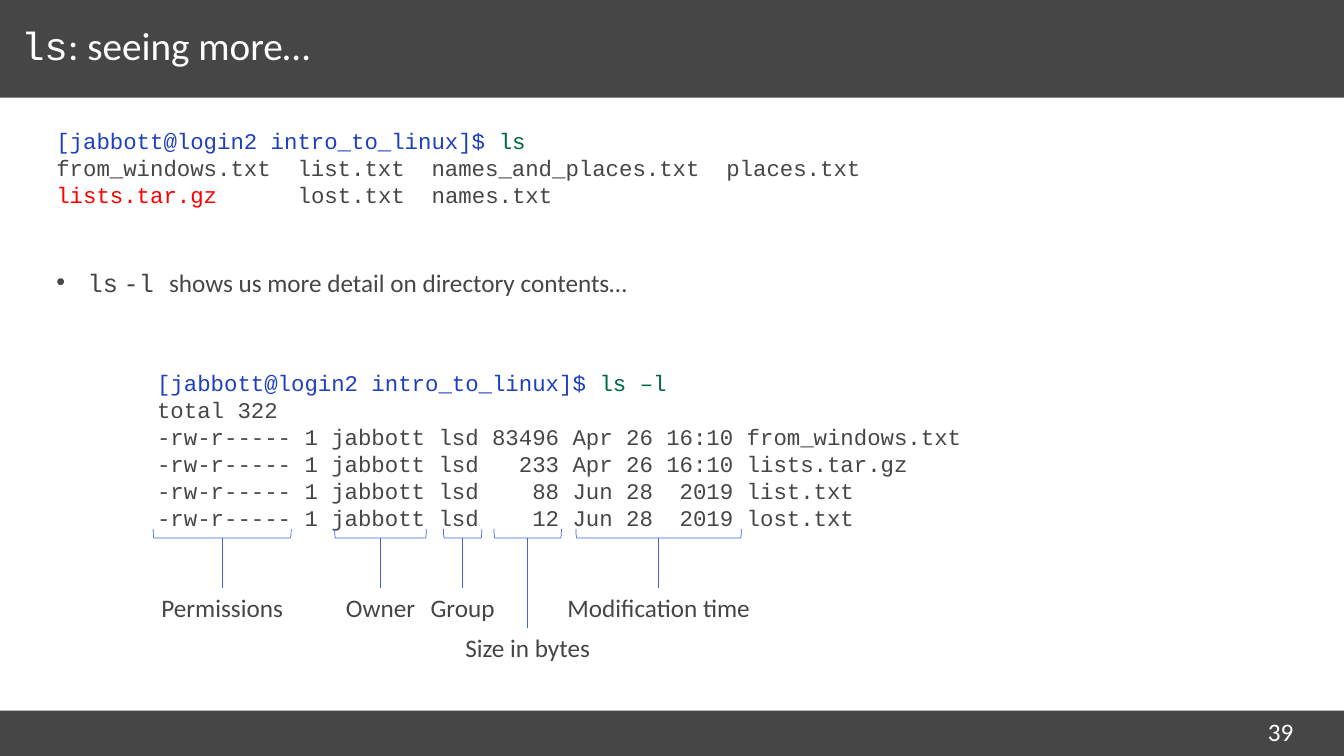
from dataclasses import dataclass
from typing import Any

from lxml.etree import SubElement
from pptx import Presentation
from pptx.dml.color import RGBColor
from pptx.dml.fill import FillFormat
from pptx.enum.shapes import MSO_CONNECTOR as Connector, MSO_SHAPE as Shape
from pptx.enum.text import MSO_ANCHOR as Anchor, MSO_AUTO_SIZE as AutoSize, PP_ALIGN as Align
from pptx.oxml.ns import qn
from pptx.util import Cm, Pt

SANS, MONO = "Calibri", "Courier New"
GREY, WHITE, RED = "464646", "FFFFFF", "FF0000"
PROMPT, COMMAND, BRACKET = "1D40BE", "00683E", "4365E2"
SLIDE_WIDTH, SLIDE_HEIGHT = 33.87, 19.05
BRACKET_MIDDLE, BRACKET_DEPTH = 13.44, 0.23
STEM_TOP, LABEL_HEIGHT = 13.56, 1.02


@dataclass
class Piece:
    text: str
    color: str = GREY
    font: str = MONO


@dataclass
class Field:
    label: str
    centre: float
    span: float
    label_width: float
    label_top: float = 14.81


FIELDS = [
    Field("Permissions", 5.6, 3.48, 3.61),
    Field("Owner", 9.59, 2.31, 2.29),
    Field("Group", 11.66, 0.97, 2.13),
    Field("Size in bytes", 13.3, 1.7, 3.71, 15.82),
    Field("Modification time", 16.6, 4.17, 5.18),
]

SHORT_LISTING = [
    Piece("[jabbott@login2 intro_to_linux]$ ", PROMPT),
    Piece("ls\n", COMMAND),
    Piece("from_windows.txt  list.txt  names_and_places.txt  places.txt\n"),
    Piece("lists.tar.gz      ", RED),
    Piece("lost.txt  names.txt"),
]
EXPLANATION = [
    Piece("ls"),
    Piece(" ", font=SANS),
    Piece("-l "),
    Piece("shows us more detail on directory contents…", font=SANS),
]
LONG_LISTING = [
    Piece("[jabbott@login2 intro_to_linux]$ ", PROMPT),
    Piece("ls –l\n", COMMAND),
    Piece("""total 322
-rw-r----- 1 jabbott lsd 83496 Apr 26 16:10 from_windows.txt
-rw-r----- 1 jabbott lsd   233 Apr 26 16:10 lists.tar.gz
-rw-r----- 1 jabbott lsd    88 Jun 28  2019 list.txt
-rw-r----- 1 jabbott lsd    12 Jun 28  2019 lost.txt"""),
]


def apply(target: Any, values: dict[str, Any]) -> None:
    for name, value in values.items():
        setattr(target, name, value)


def paint(fill: FillFormat, color: str) -> None:
    fill.solid()
    fill.fore_color.rgb = RGBColor.from_string(color)


def box(left: float, top: float, width: float, height: float) -> dict[str, Any]:
    return {"left": Cm(left), "top": Cm(top), "width": Cm(width), "height": Cm(height)}


def write(paragraph: Any, pieces: list[Piece], size: int) -> None:
    for piece in pieces:
        for number, line in enumerate(piece.text.split("\n")):
            if number:
                paragraph.add_line_break()
                SubElement(paragraph._p[-1], qn("a:rPr"), sz=str(size * 100))
            if line:
                run = paragraph.add_run()
                run.text = line
                apply(run.font, {"name": piece.font, "size": Pt(size)})
                paint(run.font.fill, piece.color)


def indent(paragraph: Any, left: float, hanging: float = 0) -> Any:
    properties = paragraph._p.get_or_add_pPr()
    properties.set("marL", str(Cm(left)))
    properties.set("indent", str(-Cm(hanging)))
    return properties


def write_listing(paragraph: Any, pieces: list[Piece], left: float, before: float) -> None:
    apply(paragraph, {"line_spacing": Pt(19.3), "space_before": Pt(before), "space_after": Pt(0)})
    SubElement(indent(paragraph, left), qn("a:buNone"))
    write(paragraph, pieces, 16)


def add_band(slide: Any, top: float, height: float) -> None:
    band = slide.shapes.add_shape(Shape.RECTANGLE, *box(0, top, SLIDE_WIDTH, height).values())
    band.shadow.inherit = False
    paint(band.fill, GREY)
    band.line.fill.background()
    band.element.getparent().insert(2, band.element)


def add_field(slide: Any, field: Field) -> None:
    group = slide.shapes.add_group_shape().shapes

    bracket = group.add_shape(Shape.LEFT_BRACKET, *box(
        field.centre - BRACKET_DEPTH / 2, BRACKET_MIDDLE - field.span / 2,
        BRACKET_DEPTH, field.span).values())
    bracket.rotation = 270
    bracket.shadow.inherit = False
    bracket.fill.background()

    stem = group.add_connector(Connector.STRAIGHT, Cm(field.centre), Cm(STEM_TOP),
                               Cm(field.centre), Cm(field.label_top))
    SubElement(stem._element.spPr, qn("a:effectLst"))
    for stroke in (bracket.line, stem.line):
        paint(stroke.fill, BRACKET)
        stroke.width = Pt(0.5)

    label = group.add_textbox(*box(field.centre - field.label_width / 2, field.label_top,
                                   field.label_width, LABEL_HEIGHT).values()).text_frame
    apply(label, {"word_wrap": False, "auto_size": AutoSize.SHAPE_TO_FIT_TEXT})
    label.paragraphs[0].alignment = Align.CENTER
    write(label.paragraphs[0], [Piece(field.label, font=SANS)], 18)


def main() -> None:
    presentation = Presentation()
    apply(presentation, {"slide_width": Cm(SLIDE_WIDTH), "slide_height": Cm(SLIDE_HEIGHT)})
    slide = presentation.slides.add_slide(presentation.slide_layouts[1])
    title, body = slide.shapes.title, slide.placeholders[1]

    # Header and footer bands
    add_band(slide, 0, 2.46)
    add_band(slide, 17.91, 1.14)

    # Placeholders
    frame = {"margin_left": 0, "margin_right": 0, "margin_top": Cm(0.13),
             "margin_bottom": Cm(0.13), "word_wrap": True, "auto_size": AutoSize.NONE}
    apply(title, box(0.53, 0.43, 29.26, 1.63))
    apply(title.text_frame, frame | {"vertical_anchor": Anchor.MIDDLE})
    apply(body, box(1.42, 3.07, 30.99, 14.4))
    apply(body.text_frame, frame | {"vertical_anchor": Anchor.TOP})

    # Title
    heading = title.text_frame.paragraphs[0]
    apply(heading, {"alignment": Align.LEFT, "line_spacing": 0.8})
    write(heading, [Piece("ls", WHITE), Piece(": seeing more…", WHITE, SANS)], 28)

    # Listings and the bullet between them
    write_listing(body.text_frame.paragraphs[0], SHORT_LISTING, 0, 0)
    explanation = body.text_frame.add_paragraph()
    apply(explanation, {"space_before": Pt(42), "space_after": Pt(0)})
    bullet_color = SubElement(indent(explanation, 0.79, 0.79), qn("a:buClr"))
    SubElement(bullet_color, qn("a:srgbClr"), val=GREY)
    write(explanation, EXPLANATION, 18)
    write_listing(body.text_frame.add_paragraph(), LONG_LISTING, 2.54, 51.5)

    # Column labels
    for field in FIELDS:
        add_field(slide, field)

    # Page number
    page_number = slide.shapes.add_textbox(*box(31.7, 17.93, 1.78, 0.64).values()).text_frame
    page_number.word_wrap = True
    write(page_number.paragraphs[0], [Piece("39", WHITE, SANS)], 18)

    presentation.save("out.pptx")


if __name__ == "__main__":
    main()
